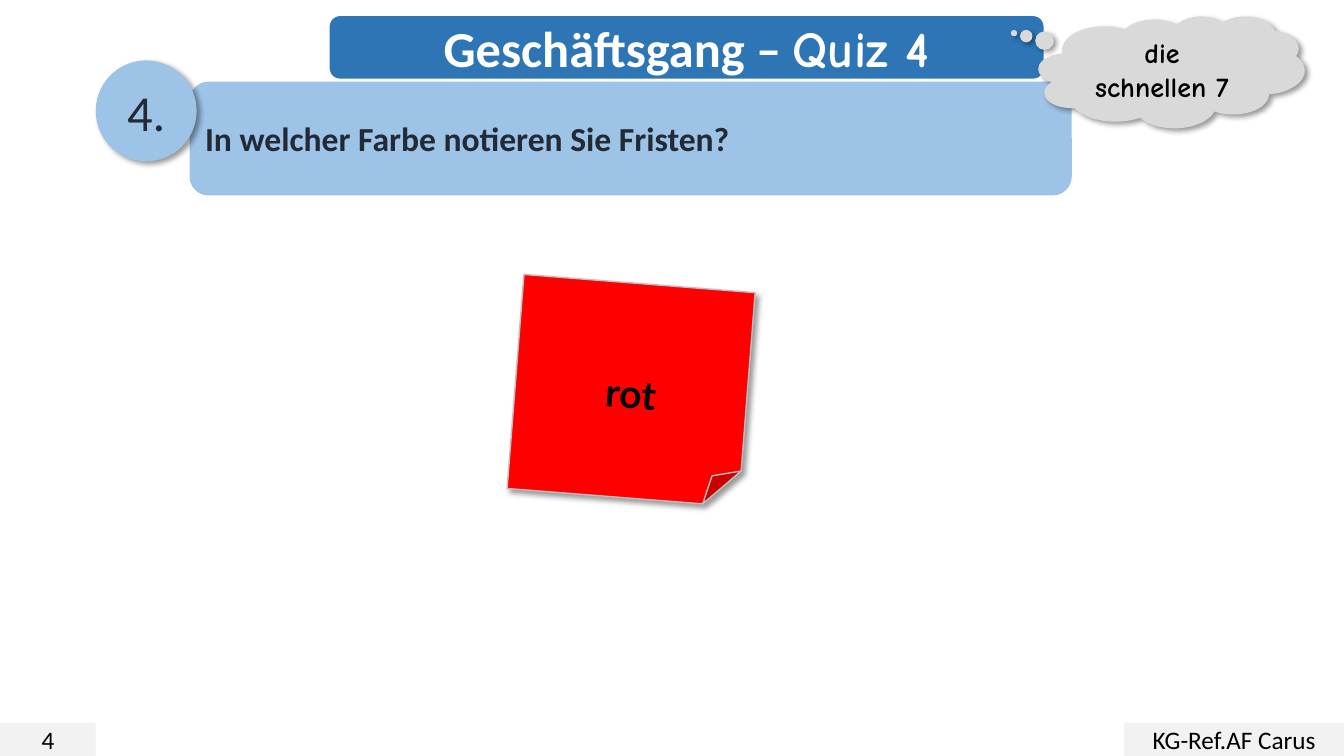
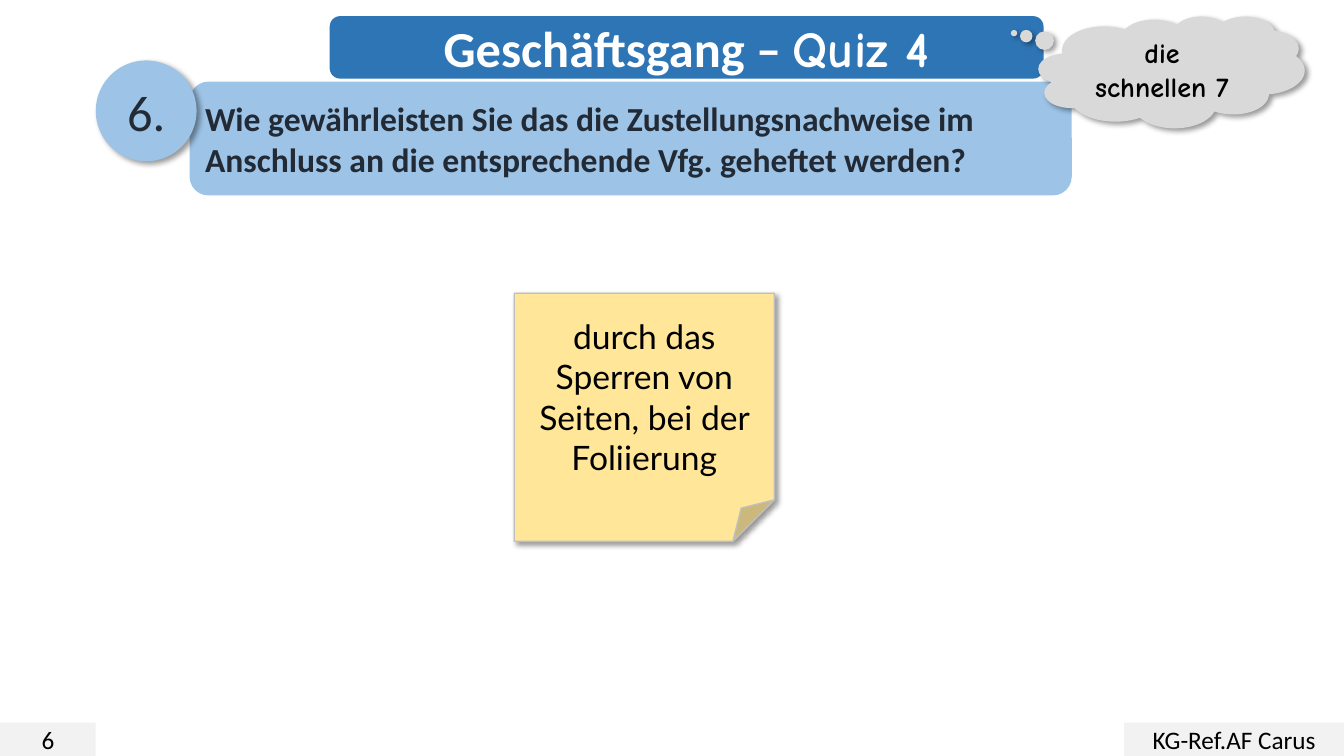
from lxml.etree import SubElement
from pptx import Presentation
from pptx.dml.color import RGBColor
from pptx.enum.shapes import MSO_SHAPE as SHAPE
from pptx.enum.text import MSO_ANCHOR as ANCHOR, PP_ALIGN as ALIGN
from pptx.oxml.ns import qn
from pptx.util import Inches, Pt

BLUE = RGBColor(0x2E, 0x75, 0xB6)
LIGHT_BLUE = RGBColor(0x9D, 0xC3, 0xE6)
NAVY = RGBColor(0x22, 0x2A, 0x35)
PALE_GREY = RGBColor(0xF2, 0xF2, 0xF2)
CLOUD_GREY = RGBColor(0xD9, 0xD9, 0xD9)
EDGE_GREY = RGBColor(0xBF, 0xBF, 0xBF)
RED = RGBColor(0xFF, 0x00, 0x00)
YELLOW = RGBColor(0xFF, 0xE6, 0x99)
WHITE = RGBColor(0xFF, 0xFF, 0xFF)
BLACK = RGBColor(0x00, 0x00, 0x00)
BODY, HAND, NOTE = "Calibri", "Comic Neue", "Lato"

WIDTH, HEIGHT = 13.33, 7.5
FOOTER_HEIGHT = 0.33
FOOTER_TOP = HEIGHT - FOOTER_HEIGHT
NUMBER_WIDTH, COURSE_WIDTH = 0.95, 2.18

TITLE = [("Geschäftsgang – ", BODY), ("Quiz 4", HAND)]
COURSE = "KG-Ref.AF Carus"
MOTTO = "die schnellen 7"
QUESTIONS = [
    {
        "number": 4,
        "question": "In welcher Farbe notieren Sie Fristen?",
        "answer": "rot",
        "box": (5.11, 2.81, 2.3, 2.13),
        "fill": RED,
        "rotation": 4.5,
        "style": {"size": 28, "bold": True, "top": 0.45},
    },
    {
        "number": 6,
        "question": "Wie gewährleisten Sie das die Zustellungsnachweise im "
                    "Anschluss an die entsprechende Vfg. geheftet werden?",
        "answer": "durch das Sperren von Seiten, bei der Foliierung",
        "box": (5.1, 2.91, 2.58, 2.46),
        "fill": YELLOW,
        "rotation": 0,
        "style": {"size": 24},
    },
]


def write(shape, text, size=18, font=BODY, color=BLACK, bold=False,
          align=ALIGN.CENTER, top=0.05):
    frame = shape.text_frame
    frame.word_wrap = True
    frame.vertical_anchor = ANCHOR.MIDDLE
    frame.margin_top = Inches(top)
    paragraph = frame.paragraphs[0]
    paragraph.alignment = align
    parts = [(text, font)] if isinstance(text, str) else text
    for words, face in parts:
        run = paragraph.add_run()
        run.text = words
        run.font.name = face
        run.font.size = Pt(size)
        run.font.bold = bold
        run.font.color.rgb = color


def add_shadow(shape):
    effects = shape._element.spPr.find(qn("a:effectLst"))
    shadow = SubElement(effects, qn("a:outerShdw"), blurRad=str(Pt(4)),
                        dist=str(Pt(3)), dir=str(45 * 60000),
                        algn="tl", rotWithShape="0")
    tint = SubElement(shadow, qn("a:srgbClr"), val=str(BLACK))
    SubElement(tint, qn("a:alpha"), val="40000")


def add_panel(slide, preset, box, fill, edge=None, shadow=False):
    panel = slide.shapes.add_shape(preset, *map(Inches, box))
    panel.shadow.inherit = False
    panel.fill.solid()
    panel.fill.fore_color.rgb = fill
    if edge is None:
        panel.line.fill.background()
    else:
        panel.line.color.rgb = edge
        panel.line.width = Pt(1)
    if shadow:
        add_shadow(panel)
    return panel


def add_frame(slide, number):
    title = add_panel(slide, SHAPE.ROUNDED_RECTANGLE, (3.27, 0.16, 7.08, 0.62), BLUE)
    write(title, TITLE, size=36, color=WHITE, bold=True)
    footers = [(0, NUMBER_WIDTH, str(number)),
               (WIDTH - COURSE_WIDTH, COURSE_WIDTH, COURSE)]
    for left, width, text in footers:
        footer = add_panel(slide, SHAPE.RECTANGLE,
                           (left, FOOTER_TOP, width, FOOTER_HEIGHT), PALE_GREY)
        write(footer, text)


def add_question(slide, number, question):
    band = add_panel(slide, SHAPE.ROUNDED_RECTANGLE, (1.88, 0.81, 8.75, 1.13), LIGHT_BLUE)
    write(band, question, size=24, color=NAVY, bold=True, align=ALIGN.LEFT)
    badge = add_panel(slide, SHAPE.OVAL, (0.95, 0.6, 1, 1), LIGHT_BLUE, shadow=True)
    write(badge, f"{number}.", size=36, color=NAVY)


def add_cloud(slide):
    cloud = add_panel(slide, SHAPE.CLOUD_CALLOUT, (10.3, 0.16, 2.64, 1.11),
                      CLOUD_GREY, shadow=True)
    cloud.adjustments[0], cloud.adjustments[1] = -0.592, -0.348
    write(cloud, MOTTO, size=20, font=HAND, bold=True)


def add_answer(slide, entry):
    note = add_panel(slide, SHAPE.FOLDED_CORNER, entry["box"], entry["fill"],
                     edge=EDGE_GREY, shadow=True)
    note.rotation = entry["rotation"]
    write(note, entry["answer"], font=NOTE, **entry["style"])


def main():
    deck = Presentation()
    deck.slide_width, deck.slide_height = Inches(WIDTH), Inches(HEIGHT)
    for entry in QUESTIONS:
        slide = deck.slides.add_slide(deck.slide_layouts[6])
        add_frame(slide, entry["number"])
        add_question(slide, entry["number"], entry["question"])
        add_cloud(slide)
        add_answer(slide, entry)
    deck.save("out.pptx")


if __name__ == "__main__":
    main()
